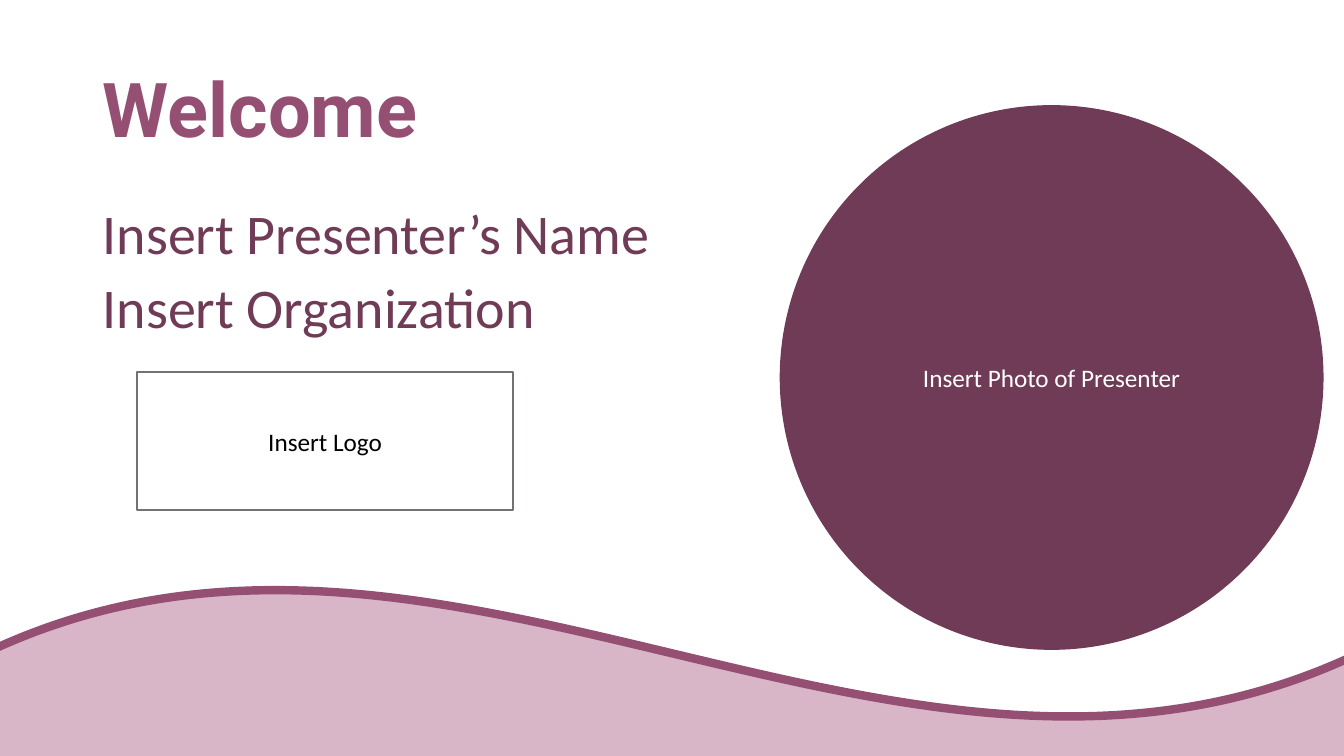
from pptx import Presentation
from pptx.dml.color import RGBColor
from pptx.enum.shapes import MSO_SHAPE
from pptx.enum.text import MSO_ANCHOR, MSO_AUTO_SIZE, PP_ALIGN
from pptx.oxml.ns import qn
from pptx.util import Inches, Pt
from lxml.etree import SubElement

HUES = {"plum": "703B56", "rose": "954F72", "pink": "D8B5C7",
        "gray": "767171", "white": "FFFFFF", "black": "000000"}


def hue(name):
    return RGBColor.from_string(HUES[name])


def place(shape, box):
    shape.left, shape.top, shape.width, shape.height = map(Inches, box)


def write(para, text, size, color, font="Calibri", bold=False):
    run = para.add_run()
    run.text = text
    run.font.name, run.font.size, run.font.bold = font, Pt(size), bold
    run.font.color.rgb = hue(color)


def draw(slide, kind, box, fill, line, width=1):
    shape = slide.shapes.add_shape(kind, *map(Inches, box))
    shape.shadow.inherit = False
    shape.fill.solid()
    shape.fill.fore_color.rgb = hue(fill)
    shape.line.color.rgb = hue(line)
    shape.line.width = Pt(width)
    return shape


# Wave along the foot, behind everything else
def add_wave(slide, box):
    wave = draw(slide, MSO_SHAPE.WAVE, box, "pink", "rose", 6)
    slide.shapes._spTree.insert(2, wave._element)


# Title
def add_title(slide, box, text):
    title = slide.shapes.title
    place(title, box)
    frame = title.text_frame
    frame.auto_size = MSO_AUTO_SIZE.NONE
    frame.vertical_anchor = MSO_ANCHOR.MIDDLE
    para = frame.paragraphs[0]
    para.alignment = PP_ALIGN.LEFT
    para.line_spacing = 0.9
    write(para, text, 54, "rose", "Roboto", True)


# Presenter lines, without bullets
def add_lines(slide, box, lines):
    body = slide.placeholders[1]
    place(body, box)
    frame = body.text_frame
    frame.auto_size = MSO_AUTO_SIZE.NONE
    for i, text in enumerate(lines):
        para = frame.add_paragraph() if i else frame.paragraphs[0]
        props = para._p.get_or_add_pPr()
        props.set("marL", "0")
        props.set("indent", "0")
        SubElement(props, qn("a:buNone"))
        para.line_spacing = 0.9
        para.space_before = Pt(10 if i else 0)
        write(para, text, 40, "plum")


# Labelled frame for a photo or a logo
def add_frame(slide, kind, box, text, fill, line, color):
    frame = draw(slide, kind, box, fill, line).text_frame
    frame.word_wrap = True
    frame.vertical_anchor = MSO_ANCHOR.MIDDLE
    para = frame.paragraphs[0]
    para.alignment = PP_ALIGN.CENTER
    write(para, text, 18, color)


def main():
    deck = Presentation()
    deck.slide_width, deck.slide_height = Inches(13.33), Inches(7.5)
    slide = deck.slides.add_slide(deck.slide_layouts[1])
    add_wave(slide, (-0.15, 5.83, 13.63, 5.21))
    add_title(slide, (0.92, 0.4, 11.5, 1.45), "Welcome")
    add_lines(slide, (0.92, 1.99, 11.5, 4.76),
              ["Insert Presenter’s Name", "Insert Organization"])
    add_frame(slide, MSO_SHAPE.OVAL, (7.74, 1.05, 5.38, 5.39),
              "Insert Photo of Presenter", "plum", "plum", "white")
    add_frame(slide, MSO_SHAPE.RECTANGLE, (1.36, 3.69, 3.73, 1.37),
              "Insert Logo", "white", "gray", "black")
    deck.save("out.pptx")


if __name__ == "__main__":
    main()
